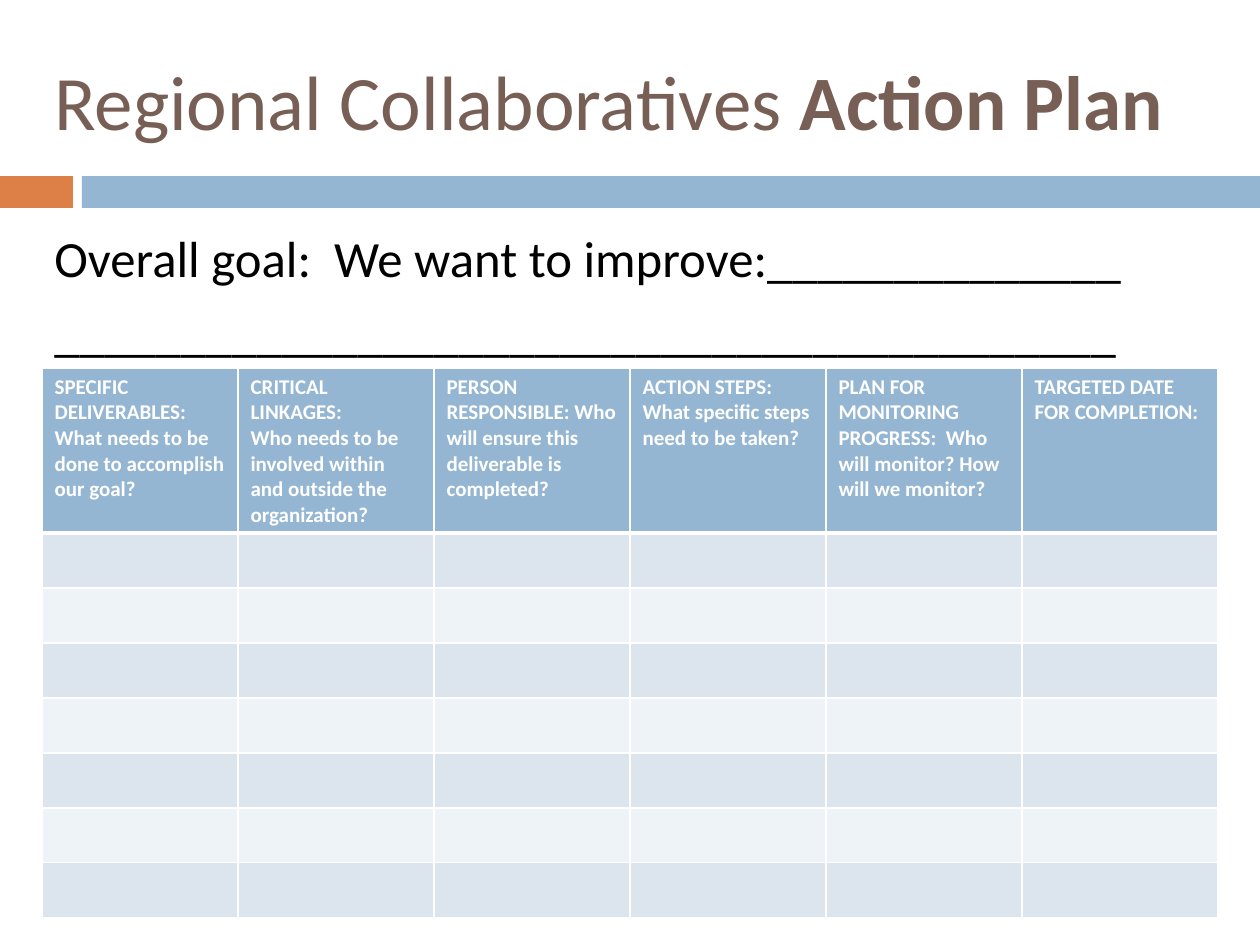
"""Builds the action plan slide with its goal lines and planning table."""
import pptx
import pptx.dml.color
import pptx.enum.shapes
import pptx.enum.text
import pptx.oxml.ns
import pptx.util
from lxml import etree

PX = 914400 // 126
COLORS = {
    "title": "775F55", "accent": "DD8047", "header": "94B6D2",
    "odd": "DCE5EE", "even": "EEF3F7", "text": "000000", "white": "FFFFFF",
}
HEADINGS = [
    "SPECIFIC DELIVERABLES: What needs to be done to accomplish our goal?",
    "CRITICAL LINKAGES:\nWho needs to be involved within and outside the organization?",
    "PERSON RESPONSIBLE: Who will ensure this deliverable is completed?",
    "ACTION STEPS: What specific steps need to be taken?",
    "PLAN FOR MONITORING PROGRESS:  Who will monitor? How will we monitor?",
    "TARGETED DATE FOR COMPLETION:",
]
GOAL_LINES = ["Overall goal:  We want to improve:" + "_" * 14, "_" * 42]


class SlideStyle:
    def __init__(self, slide, face="Calibri"):
        self.slide = slide
        self.face = face

    def color(self, key):
        return pptx.dml.color.RGBColor.from_string(COLORS[key])

    def font(self, paragraph, size, key, bold=None):
        paragraph.font.name = self.face
        paragraph.font.size = pptx.util.Pt(size)
        paragraph.font.color.rgb = self.color(key)
        paragraph.font.bold = bold

    def band(self, left, top, width, height, key):
        band = self.slide.shapes.add_shape(
            pptx.enum.shapes.MSO_SHAPE.RECTANGLE,
            *(n * PX for n in (left, top, width, height)))
        band.shadow.inherit = False
        band.fill.solid()
        band.fill.fore_color.rgb = self.color(key)
        band.line.fill.background()

    def text(self, left, top, width, height, lines, size, key, middle=False, space=0):
        box = self.slide.shapes.add_textbox(*(n * PX for n in (left, top, width, height)))
        frame = box.text_frame
        frame.word_wrap = True
        anchor = pptx.enum.text.MSO_ANCHOR
        frame.vertical_anchor = anchor.MIDDLE if middle else anchor.TOP
        frame.text = "\n".join(lines)
        for paragraph in frame.paragraphs:
            paragraph.space_before = pptx.util.Pt(space)
            self.font(paragraph, size, key)
        return frame

    def border(self, cell, side, points):
        properties = cell._tc.get_or_add_tcPr()
        line = etree.SubElement(
            properties, pptx.oxml.ns.qn("a:ln" + side), w=str(pptx.util.Pt(points)))
        fill = etree.SubElement(line, pptx.oxml.ns.qn("a:solidFill"))
        etree.SubElement(fill, pptx.oxml.ns.qn("a:srgbClr"), val=COLORS["white"])

    def table(self, left, top, width, headings, blank_rows, header_height, row_height):
        height = header_height + blank_rows * row_height
        table = self.slide.shapes.add_table(
            blank_rows + 1, len(headings), *(n * PX for n in (left, top, width, height))).table
        for column in table.columns:
            column.width = width // len(headings) * PX
        for index, row in enumerate(table.rows):
            row.height = (row_height if index else header_height) * PX
            key = ("even", "odd")[index % 2] if index else "header"
            for column, cell in enumerate(row.cells):
                edges = {"L": 1, "R": 1, "T": 3 if index == 1 else 1, "B": 1 if index else 3}
                for side, points in edges.items():
                    self.border(cell, side, points)
                cell.fill.solid()
                cell.fill.fore_color.rgb = self.color(key)
                if index == 0:
                    cell.text = headings[column]
                    for paragraph in cell.text_frame.paragraphs:
                        self.font(paragraph, 12, "white", True)


def main():
    presentation = pptx.Presentation()
    presentation.slide_width = pptx.util.Inches(10)
    presentation.slide_height = pptx.util.Inches(7.5)
    plan = SlideStyle(presentation.slides.add_slide(presentation.slide_layouts[6]))

    plan.band(0, 176, 73, 32, "accent")
    plan.band(82, 176, 1178, 32, "header")
    title = plan.text(42, 32, 1176, 136, ["Regional Collaboratives "], 44, "title", middle=True)
    emphasis = title.paragraphs[0].add_run()
    emphasis.text = "Action Plan"
    emphasis.font.bold = True
    plan.text(42, 221, 1176, 620, GOAL_LINES, 29, "text", space=7)
    plan.table(42, 368, 1176, HEADINGS, 7, 165, 55)

    presentation.save("out.pptx")


if __name__ == "__main__":
    main()
